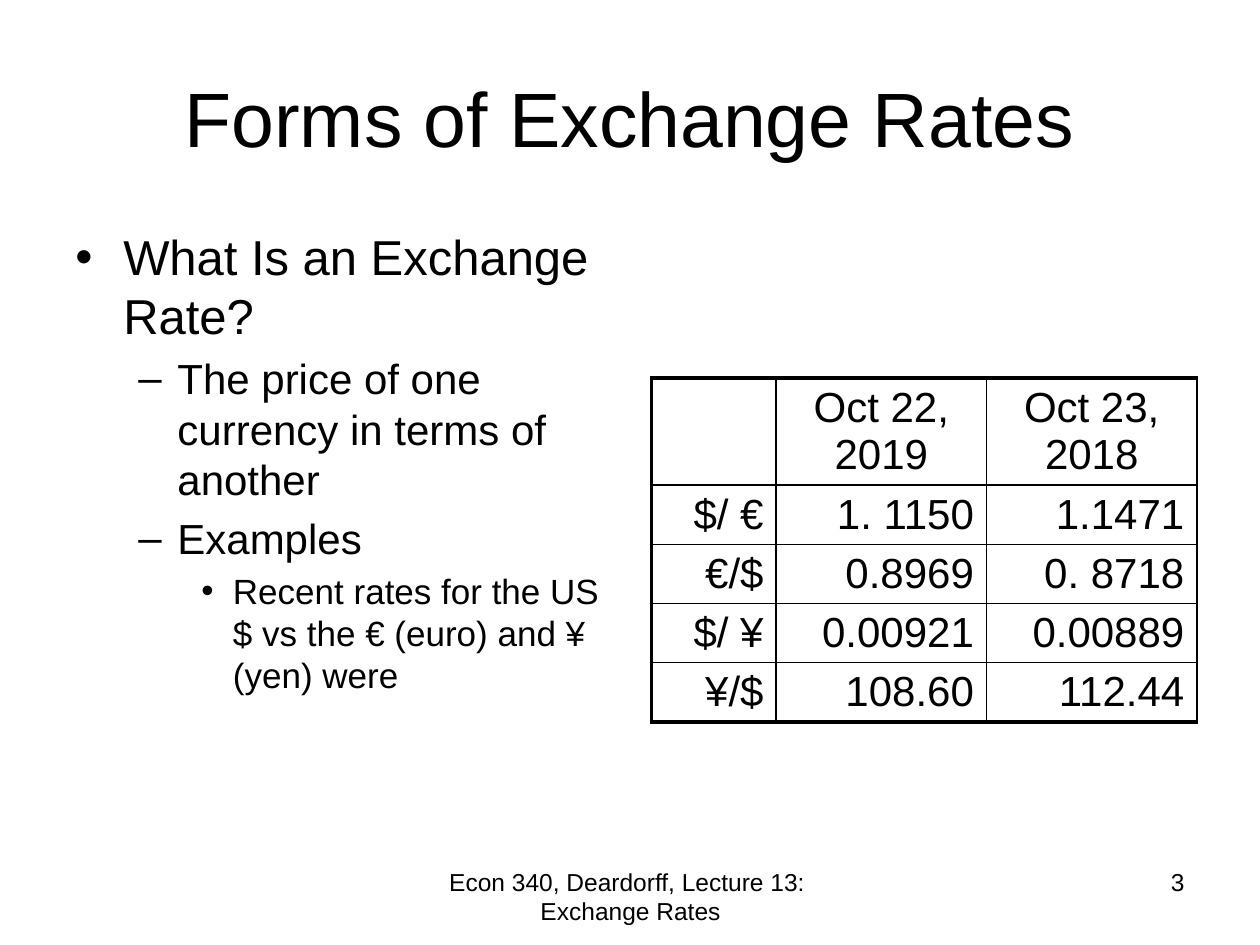
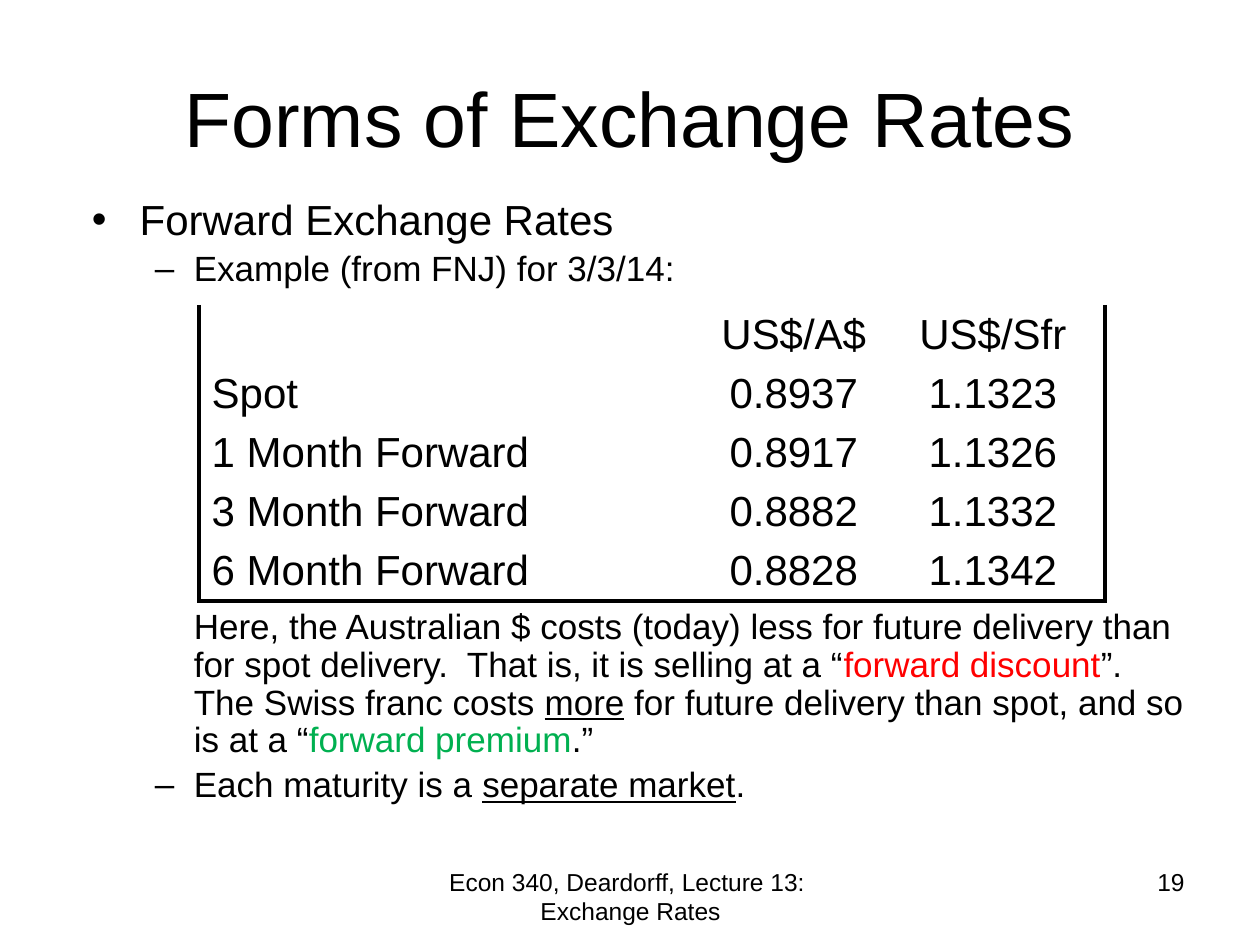
from lxml.etree import SubElement
from pptx import Presentation
from pptx.dml.color import RGBColor
from pptx.enum.text import MSO_ANCHOR, PP_ALIGN
from pptx.oxml.ns import qn
from pptx.util import Inches, Pt

COLORS = {"ink": "000000", "loss": "FF0000", "gain": "00B050"}
FONT = "Arial"
TITLE = "Forms of Exchange Rates"
FOOTER = "Econ 340, Deardorff, Lecture 13:  Exchange Rates"
LEFT, MID, RIGHT = PP_ALIGN.LEFT, PP_ALIGN.CENTER, PP_ALIGN.RIGHT
# Bullet, left margin and hang of each outline level
LEVELS = [("•", 0.38, 0.38), ("–", 0.81, 0.31), ("•", 1.25, 0.25)]
THIN, THICK = 1, 2.25
ROW = 0.47


class Deck:
    def __init__(self):
        self.prs = Presentation()
        self.prs.slide_width, self.prs.slide_height = Inches(10), Inches(7.5)
        self.slide = None

    def page(self, number):
        """Start a slide with the shared title and footer."""
        self.slide = self.prs.slides.add_slide(self.prs.slide_layouts[5])
        title = self.slide.shapes.title
        self.place(title, 0.5, 0.3, 9, 1.25)
        title.text_frame.text = TITLE
        title.text_frame.vertical_anchor = MSO_ANCHOR.MIDDLE
        self.style(title.text_frame.paragraphs[0], 44, MID)
        self.label(FOOTER, 3.42, 3.17, MID)
        self.label(str(number), 7.17, 2.33, RIGHT)

    def place(self, shape, *box):
        shape.left, shape.top, shape.width, shape.height = map(Inches, box)

    def style(self, para, size, align=LEFT):
        para.alignment = align
        for run in para.runs:
            self.ink(run, size)

    def ink(self, run, size, color="ink", under=False):
        run.font.name, run.font.size = FONT, Pt(size)
        run.font.color.rgb = RGBColor.from_string(COLORS[color])
        if under:
            run.font.underline = True

    def frame(self, *box):
        frame = self.slide.shapes.add_textbox(*map(Inches, box)).text_frame
        frame.word_wrap = True
        return frame

    def label(self, text, left, width, align):
        frame = self.frame(left, 6.83, width, 0.52)
        frame.text = text
        self.style(frame.paragraphs[0], 14, align)

    def outline(self, box, sizes, items, pitch=None):
        """Items are (level, parts, gap); a gap in points replaces the bullet."""
        frame = self.frame(*box)
        for i, (level, parts, gap) in enumerate(items):
            para = frame.add_paragraph() if i else frame.paragraphs[0]
            para.level = level
            para.line_spacing = pitch
            size = sizes[level]
            para.space_before = Pt(gap or size * 0.2)
            for text, *look in parts:
                run = para.add_run()
                run.text = text
                self.ink(run, size, *look)
            mark, margin, hang = LEVELS[level]
            props = para._p.get_or_add_pPr()
            props.set("marL", str(Inches(margin)))
            props.set("indent", str(0 if gap else -Inches(hang)))
            if gap:
                SubElement(props, qn("a:buNone"))
            else:
                SubElement(props, qn("a:buFont")).set("typeface", FONT)
                SubElement(props, qn("a:buChar")).set("char", mark)

    def table(self, left, top, widths, heights, rows, aligns, edges):
        """Edges gives the line widths of a cell as a dict of sides."""
        grid = self.slide.shapes.add_table(
            len(rows), len(widths), Inches(left), Inches(top),
            Inches(sum(widths)), Inches(sum(heights))).table
        grid.first_row = grid.horz_banding = False
        for col, width in zip(grid.columns, widths):
            col.width = Inches(width)
        for r, (row, height) in enumerate(zip(rows, heights)):
            grid.rows[r].height = Inches(height)
            for c, text in enumerate(row):
                cell = grid.cell(r, c)
                cell.margin_bottom = Inches(0.02)
                cell.text_frame.text = text
                para = cell.text_frame.paragraphs[0]
                para.line_spacing = Pt(26.8)
                self.style(para, 24, aligns[c] if r else MID)
                self.border(cell, edges(r, c))
                cell.fill.background()

    def border(self, cell, sides):
        props = cell._tc.get_or_add_tcPr()
        for side in "LRTB":
            line = SubElement(props, qn(f"a:ln{side}"))
            width = sides.get(side)
            if width:
                line.set("w", str(Pt(width)))
                fill = SubElement(line, qn("a:solidFill"))
                SubElement(fill, qn("a:srgbClr")).set("val", COLORS["ink"])
            else:
                SubElement(line, qn("a:noFill"))


def full(r, c):
    """Thin grid with heavy left, top and bottom edges."""
    return {"L": THIN if c else THICK, "R": THIN,
            "T": THIN if r else THICK, "B": THICK if r == 4 else THIN}


def cup(r, c):
    """Heavy line on the left, right and bottom of the whole table."""
    return {"L": THICK * (c == 0), "R": THICK * (c == 2), "B": THICK * (r == 4)}


def recent(deck):
    deck.page(3)
    deck.outline((0.5, 1.75, 4.42, 4.95), (28, 24, 20), [
        (0, [("What Is an Exchange Rate?",)], None),
        (1, [("The price of one currency in terms of another",)], None),
        (1, [("Examples",)], None),
        (2, [("Recent rates for the US $ vs the € (euro) and ¥ (yen) were",)], None),
    ])
    deck.table(5.17, 3, (0.99, 1.67, 1.67), [0.85] + [ROW] * 4, [
        ("", "Oct 22, 2019", "Oct 23, 2018"),
        ("$/ €", "1. 1150", "1.1471"),
        ("€/$", "0.8969", "0. 8718"),
        ("$/ ¥", "0.00921", "0.00889"),
        ("¥/$", "108.60", "112.44"),
    ], (RIGHT, RIGHT, RIGHT), full)


def forward(deck):
    deck.page(19)
    deck.outline((0.63, 1.53, 8.91, 5.53), (24, 20), [
        (0, [("Forward Exchange Rates",)], None),
        (1, [("Example (from FNJ) for 3/3/14:",)], None),
        (1, [("Here, the Australian $ costs (today) less for future delivery "
              "than for spot delivery.  That is, it is selling at a “",),
             ("forward discount", "loss"),
             ("”. The Swiss franc costs ",),
             ("more", "ink", True),
             (" for future delivery than spot, and so is at a “",),
             ("forward premium", "gain"),
             (".”",)], 183),
        (1, [("Each maturity is a ",), ("separate market", "ink", True),
             (".",)], None),
    ], 0.9)
    deck.table(1.58, 2.42, (4.03, 1.38, 1.78), [ROW] * 5, [
        ("", "US$/A$", "US$/Sfr"),
        ("Spot", "0.8937", "1.1323"),
        ("1 Month Forward", "0.8917", "1.1326"),
        ("3 Month Forward", "0.8882", "1.1332"),
        ("6 Month Forward", "0.8828", "1.1342"),
    ], (LEFT, MID, MID), cup)


def main():
    deck = Deck()
    recent(deck)
    forward(deck)
    deck.prs.save("out.pptx")


if __name__ == "__main__":
    main()
